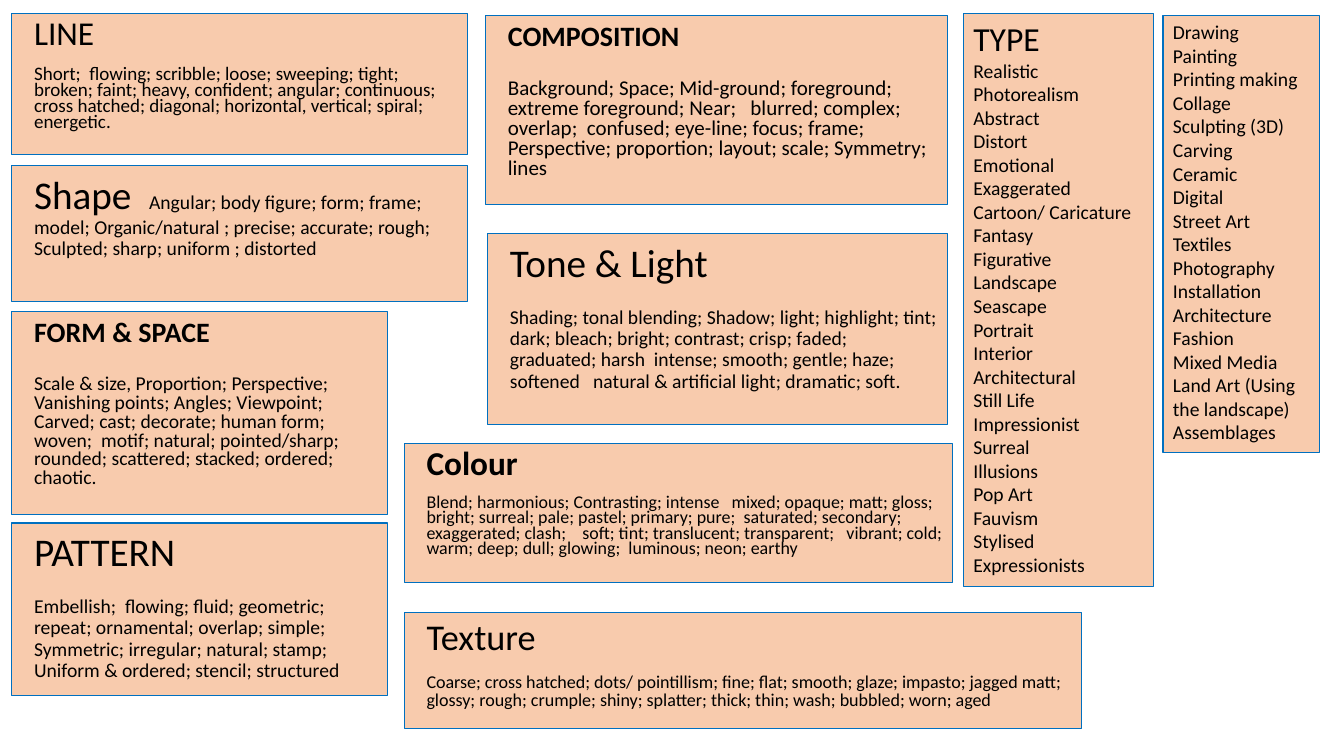
from dataclasses import dataclass

from pptx import Presentation
from pptx.dml.color import RGBColor
from pptx.enum.shapes import MSO_SHAPE
from pptx.enum.text import MSO_ANCHOR, PP_ALIGN
from pptx.slide import Slide
from pptx.util import Cm, Pt

COLOURS = {"panel": "F8CBAD", "border": "0070C0", "text": "000000"}
FONT = "Calibri"


@dataclass
class Panel:
    box: tuple[float, float, float, float]
    title: str
    title_size: float
    body: list[str]
    body_size: float
    line_spacing: float
    gap: float = 0
    bold_title: bool = False
    inline_title: bool = False
    left_inset: float = 0.56
    top_inset: float = 0.25


def word_list(box: tuple[float, float, float, float], title: str, words: list[str]) -> Panel:
    return Panel(box, title, 24, words, 14, 1.0, left_inset=0.25, top_inset=0.13)


PANELS = [
    Panel((12.24, 0.38, 11.63, 4.78), "COMPOSITION", 20, [
        "Background; Space; Mid-ground; foreground; extreme foreground; Near;   blurred; "
        "complex; overlap;  confused; eye-line; focus; frame;",
        "Perspective; proportion; layout; scale; Symmetry; lines",
    ], 15, 0.8, gap=19.5, bold_title=True),
    Panel((0.3, 7.85, 9.47, 5.11), "FORM & SPACE", 20, [
        "Scale & size, Proportion; Perspective; Vanishing points; Angles; Viewpoint;",
        "Carved; cast; decorate; human form; woven;  motif; natural; pointed/sharp; "
        "rounded; scattered; stacked; ordered; chaotic.",
    ], 14, 0.8, gap=19.5, bold_title=True),
    Panel((0.3, 0.33, 11.48, 3.56), "LINE", 23.8, [
        "Short;  flowing; scribble; loose; sweeping; tight; broken; faint; heavy, confident; "
        "angular; continuous; cross hatched; diagonal; horizontal, vertical; spiral; energetic.",
    ], 13.6, 0.7, gap=11.6),
    Panel((0.3, 4.17, 11.48, 3.43), "Shape  ", 28, [
        "Angular; body figure; form; frame; model; Organic/natural ; precise; accurate; "
        "rough; Sculpted; sharp; uniform ; distorted",
    ], 14, 0.9, inline_title=True),
    Panel((10.19, 11.18, 13.82, 3.51), "Colour", 23.8, [
        "Blend; harmonious; Contrasting; intense   mixed; opaque; matt; gloss; bright; surreal; "
        "pale; pastel; primary; pure;  saturated; secondary; exaggerated; clash;    soft; tint; "
        "translucent; transparent;   vibrant; cold; warm; deep; dull; glowing;  luminous; "
        "neon; earthy",
    ], 12.8, 0.7, gap=10.9, bold_title=True),
    Panel((12.29, 5.89, 11.58, 4.8), "Tone & Light", 28, [
        "Shading; tonal blending; Shadow; light; highlight; tint; dark; bleach; bright; contrast; "
        "crisp; faded; graduated; harsh  intense; smooth; gentle; haze; softened   natural & "
        "artificial light; dramatic; soft.",
    ], 14, 0.9, gap=15.4),
    Panel((0.3, 13.18, 9.47, 4.34), "PATTERN", 28, [
        "Embellish;  flowing; fluid; geometric; repeat; ornamental; overlap; simple;",
        "Symmetric; irregular; natural; stamp;",
        "Uniform & ordered; stencil; structured",
    ], 14, 0.9, gap=15.4),
    Panel((10.19, 15.44, 17.07, 2.92), "Texture", 25.9, [
        "Coarse; cross hatched; dots/ pointillism; fine; flat; smooth; glaze; impasto; jagged "
        "matt; glossy; rough; crumple; shiny; splatter; thick; thin; wash; bubbled; worn; aged",
    ], 12.9, 0.8, gap=12.6),
    word_list((24.28, 0.33, 4.78, 14.45), "TYPE", [
        "Realistic", "Photorealism", "Abstract", "Distort", "Emotional", "Exaggerated",
        "Cartoon/ Caricature", "Fantasy", "Figurative", "Landscape", "Seascape", "Portrait",
        "Interior", "Architectural", "Still Life", "Impressionist", "Surreal", "Illusions",
        "Pop Art", "Fauvism", "Stylised", "Expressionists",
    ]),
    word_list((29.31, 0.38, 3.94, 11.02), "", [
        "Drawing", "Painting", "Printing making", "Collage", "Sculpting (3D)", "Carving",
        "Ceramic", "Digital", "Street Art", "Textiles", "Photography", "Installation",
        "Architecture", "Fashion", "Mixed Media", "Land Art (Using the landscape)",
        "Assemblages",
    ]),
]


def colour(name: str) -> RGBColor:
    return RGBColor.from_string(COLOURS[name])


def draw_panel(slide: Slide, panel: Panel) -> None:
    shape = slide.shapes.add_shape(MSO_SHAPE.RECTANGLE, *map(Cm, panel.box))
    shape.shadow.inherit = False
    shape.fill.solid()
    shape.fill.fore_color.rgb = colour("panel")
    shape.line.color.rgb = colour("border")
    shape.line.width = Pt(0.75)

    text_frame = shape.text_frame
    text_frame.word_wrap = True
    text_frame.vertical_anchor = MSO_ANCHOR.TOP
    text_frame.margin_left = Cm(panel.left_inset)
    text_frame.margin_right = Cm(0.25)
    text_frame.margin_top = text_frame.margin_bottom = Cm(panel.top_inset)

    if panel.inline_title:
        text_frame.text = panel.title
        text_frame.paragraphs[0].add_run().text = panel.body[0]
    else:
        text_frame.text = "\n".join(([panel.title] if panel.title else []) + panel.body)

    for paragraph in text_frame.paragraphs:
        paragraph.alignment = PP_ALIGN.LEFT
        paragraph.line_spacing = panel.line_spacing
        for run in paragraph.runs:
            is_title = run.text == panel.title
            run.font.name = FONT
            run.font.size = Pt(panel.title_size if is_title else panel.body_size)
            run.font.bold = is_title and panel.bold_title
            run.font.color.rgb = colour("text")
    if panel.gap:
        text_frame.paragraphs[0].space_after = Pt(panel.gap)


def main() -> None:
    presentation = Presentation()
    presentation.slide_width = Cm(33.87)
    presentation.slide_height = Cm(19.05)
    slide = presentation.slides.add_slide(presentation.slide_layouts[6])
    for panel in PANELS:
        draw_panel(slide, panel)
    presentation.save("out.pptx")


if __name__ == "__main__":
    main()
